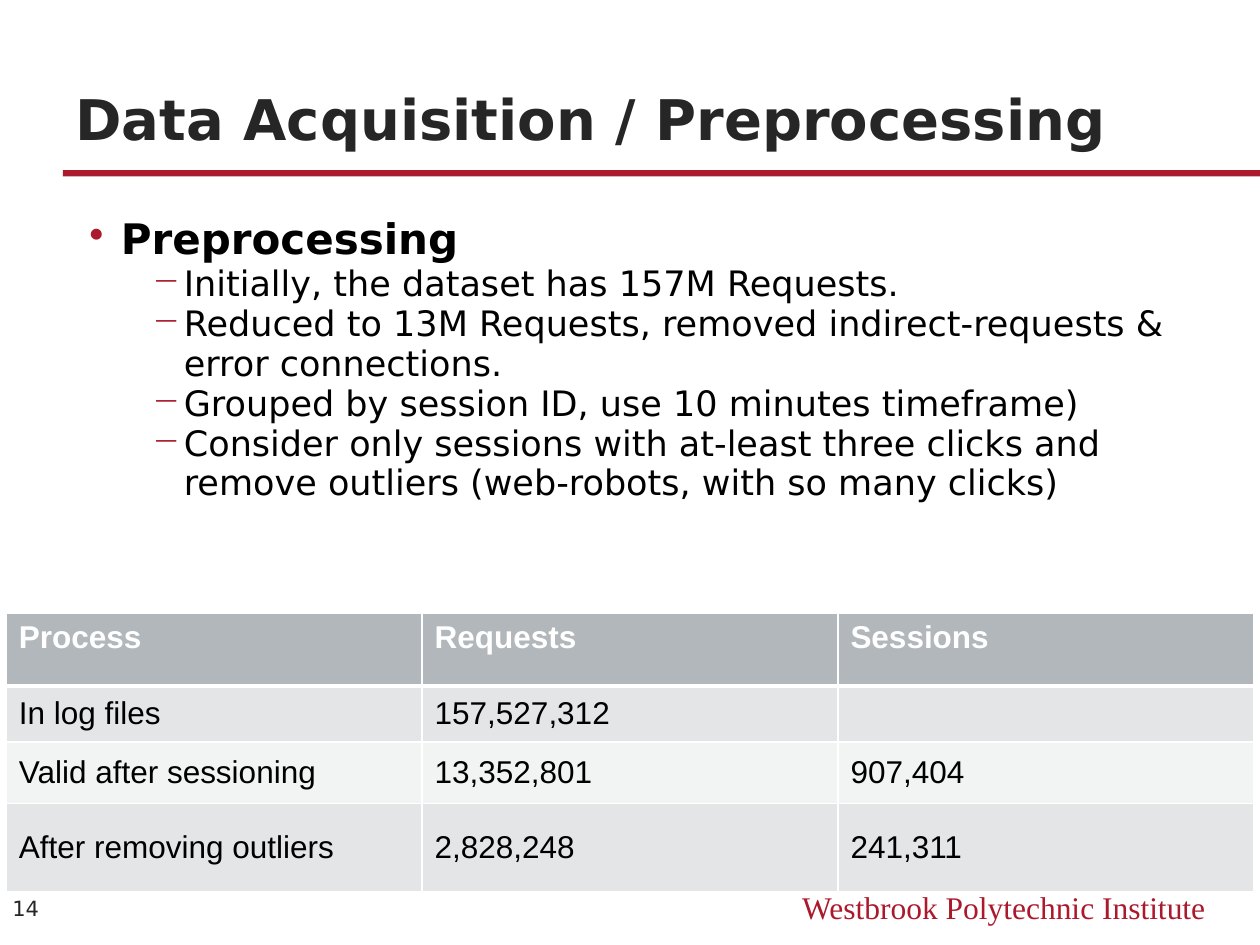
from lxml import etree
from pptx import Presentation
from pptx import util as u
from pptx.dml.color import RGBColor
from pptx.enum import shapes, text
from pptx.oxml.ns import qn

COLORS = {
    "red": "AB192D", "dark": "262626", "black": "000000", "white": "FFFFFF",
    "header": "B2B7BB", "odd_row": "E4E5E7", "even_row": "F2F3F3",
}
BULLETS = [
    (0, "Preprocessing"),
    (1, "Initially, the dataset has 157M Requests."),
    (1, "Reduced to 13M Requests, removed indirect-requests & error connections."),
    (1, "Grouped by session ID, use 10 minutes timeframe)"),
    (1, "Consider only sessions with at-least three clicks and "
        "remove outliers (web-robots, with so many clicks)"),
]
# Bullet character, text size, bold, left margin
LEVELS = [("•", 24, True, 36), ("─", 20, False, 72)]
TABLE_ROWS = [
    ("Process", "Requests", "Sessions"),
    ("In log files", "157,527,312", ""),
    ("Valid after sessioning", "13,352,801", "907,404"),
    ("After removing outliers", "2,828,248", "241,311"),
]
ROW_HEIGHTS = [41.5, 31.8, 35.2, 50.5]


def color(name):
    return RGBColor.from_string(COLORS[name])


def write(paragraph, words, size=18, font="DejaVu Sans", ink="black", bold=False,
          align=text.PP_ALIGN.LEFT):
    paragraph.alignment = align
    run = paragraph.add_run()
    run.text = words
    run.font.size = u.Pt(size)
    run.font.name = font
    run.font.bold = bold
    run.font.color.rgb = color(ink)


def add_bullet(paragraph, character, margin, hanging=18):
    properties = paragraph._p.get_or_add_pPr()
    properties.set("marL", str(u.Pt(margin)))
    properties.set("indent", str(-u.Pt(hanging)))
    bullet_color = etree.SubElement(properties, qn("a:buClr"))
    etree.SubElement(bullet_color, qn("a:srgbClr"), val=COLORS["red"])
    etree.SubElement(properties, qn("a:buChar"), char=character)


def set_borders(cell, bottom=1, top=1):
    properties = cell._tc.get_or_add_tcPr()
    widths = {"a:lnL": 1, "a:lnR": 1, "a:lnT": top, "a:lnB": bottom}
    for index, (side, width) in enumerate(widths.items()):
        line = etree.Element(qn(side), w=str(u.Pt(width)))
        fill = etree.SubElement(line, qn("a:solidFill"))
        etree.SubElement(fill, qn("a:srgbClr"), val=COLORS["white"])
        properties.insert(index, line)


class SlideBuilder:
    def __init__(self, slide):
        self.slide = slide

    def bar(self, left, top, width, height, fill):
        shape = self.slide.shapes.add_shape(
            shapes.MSO_SHAPE.RECTANGLE, *map(u.Pt, (left, top, width, height)))
        shape.shadow.inherit = False
        shape.fill.solid()
        shape.fill.fore_color.rgb = color(fill)
        shape.line.fill.background()

    def text_frame(self, left, top, width, height, anchor=text.MSO_ANCHOR.TOP):
        box = self.slide.shapes.add_textbox(*map(u.Pt, (left, top, width, height)))
        frame = box.text_frame
        frame.word_wrap = True
        frame.vertical_anchor = anchor
        return frame

    def label(self, words, *box, anchor=text.MSO_ANCHOR.TOP, **style):
        write(self.text_frame(*box, anchor=anchor).paragraphs[0], words, **style)

    def bullets(self, items, *box):
        frame = self.text_frame(*box)
        for index, (level, words) in enumerate(items):
            paragraph = frame.add_paragraph() if index else frame.paragraphs[0]
            character, size, bold, margin = LEVELS[level]
            paragraph.level = level
            paragraph.line_spacing = 0.95
            write(paragraph, words, size=size, bold=bold)
            add_bullet(paragraph, character, margin)

    def table(self, rows, heights, left, top, width):
        frame = self.slide.shapes.add_table(
            len(rows), len(rows[0]), *map(u.Pt, (left, top, width, sum(heights))))
        table = frame.table
        for column in table.columns:
            column.width = u.Pt(width / len(rows[0]))
        for index, (values, height) in enumerate(zip(rows, heights)):
            table.rows[index].height = u.Pt(height)
            header = index == 0
            fill = "header" if header else "odd_row" if index % 2 else "even_row"
            for cell, value in zip(table.rows[index].cells, values):
                cell.fill.solid()
                cell.fill.fore_color.rgb = color(fill)
                set_borders(cell, bottom=3 if header else 1, top=3 if index == 1 else 1)
                cell.vertical_anchor = text.MSO_ANCHOR.TOP if header else text.MSO_ANCHOR.MIDDLE
                if value:
                    write(cell.text_frame.paragraphs[0], value, font="Arial",
                          ink="white" if header else "black", bold=header)


def main():
    presentation = Presentation()
    presentation.slide_width, presentation.slide_height = u.Pt(720), u.Pt(540)
    builder = SlideBuilder(presentation.slides.add_slide(presentation.slide_layouts[6]))

    builder.bar(36, 97.2, 684, 3.6, "red")
    builder.label("Westbrook Polytechnic Institute", 432, 504, 264, 28.8,
                  font="Times New Roman", ink="red", align=text.PP_ALIGN.RIGHT)
    builder.label("Data Acquisition / Preprocessing", 36, 27.4, 648, 63,
                  anchor=text.MSO_ANCHOR.BOTTOM, size=32, ink="dark", bold=True)
    builder.bullets(BULLETS, 26, 120.2, 681, 366)
    builder.label("14", 0, 503.3, 36, 31, anchor=text.MSO_ANCHOR.MIDDLE,
                  size=12, ink="dark")
    builder.table(TABLE_ROWS, ROW_HEIGHTS, 3.6, 350.6, 712.8)
    presentation.save("out.pptx")


if __name__ == "__main__":
    main()
